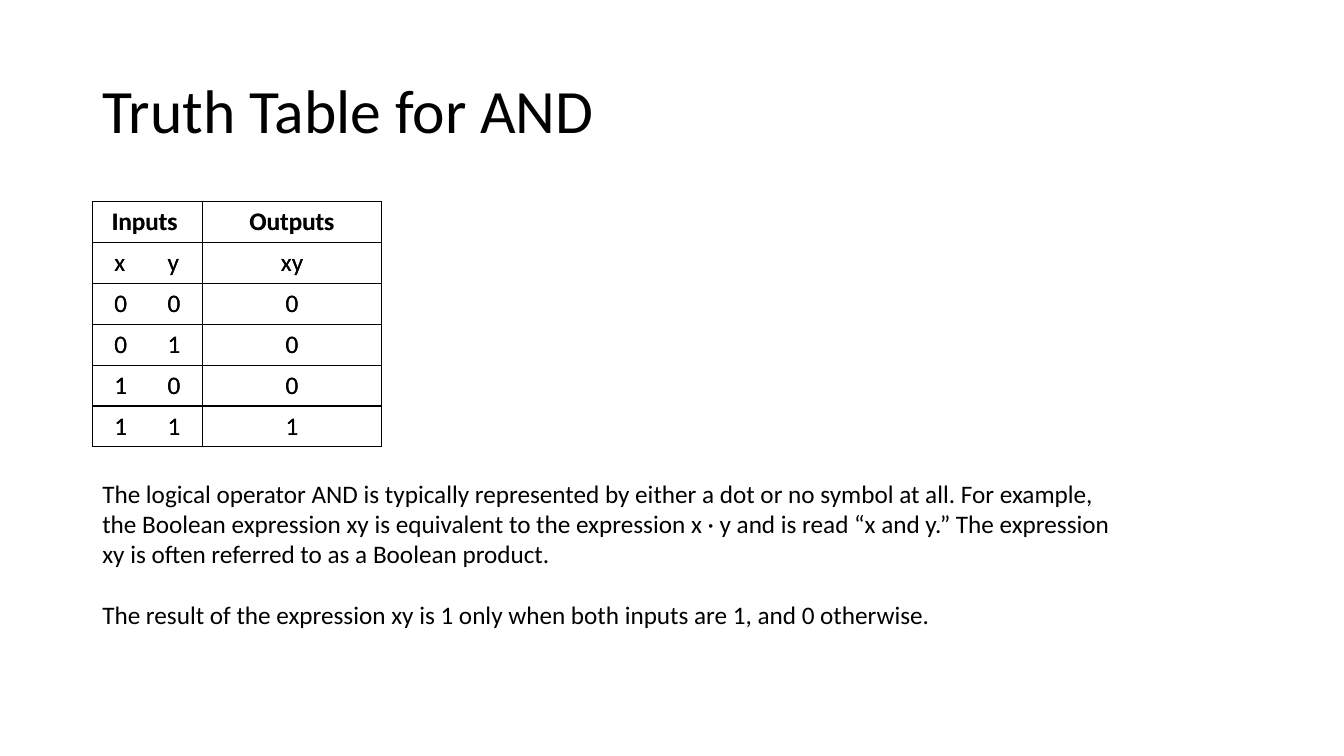
from lxml.etree import SubElement
from pptx import Presentation
from pptx.dml.color import RGBColor
from pptx.enum.text import MSO_ANCHOR, MSO_AUTO_SIZE, PP_ALIGN
from pptx.oxml.ns import qn
from pptx.util import Pt

COLORS = {"ink": "000000", "border": "000000"}
ROWS = [
    ("Inputs ", "Outputs"),
    ("x\ty", "xy"),
    ("0\t0", "0"),
    ("0\t1", "0"),
    ("1\t0", "0"),
    ("1\t1", "1"),
]
PARAGRAPHS = [
    "The logical operator AND is typically represented by either a dot or no symbol at all. "
    "For example, the Boolean expression xy is equivalent to the expression x · y and is read "
    "“x and y.” The expression xy is often referred to as a Boolean product.",
    "The result of the expression xy is 1 only when both inputs are 1, and 0 otherwise.",
]


class Deck:
    """Hold the text style and the current slide."""

    def __init__(self, prs, font="Calibri", size=18):
        """Add a title-only slide and keep the style."""
        self.s = prs.slides.add_slide(prs.slide_layouts[5])
        self.font, self.size = font, size

    def style(self, p, size=None, bold=False, align=PP_ALIGN.LEFT):
        """Format a paragraph and its runs."""
        p.alignment = align
        for r in p.runs:
            r.font.name = self.font
            r.font.size = Pt(size or self.size)
            r.font.bold = bold
            r.font.color.rgb = RGBColor.from_string(COLORS["ink"])

    def title(self, text, x, y, w, h):
        """Fill and move the title placeholder."""
        sp = self.s.shapes.title
        sp.left, sp.top, sp.width, sp.height = Pt(x), Pt(y), Pt(w), Pt(h)
        tf = sp.text_frame
        tf.text = text
        tf.auto_size = MSO_AUTO_SIZE.NONE
        tf.vertical_anchor = MSO_ANCHOR.MIDDLE
        p = tf.paragraphs[0]
        p.line_spacing = 0.9
        self.style(p, size=44)

    def text(self, paragraphs, x, y, w, h, gap):
        """Add a wrapped text box with spaced paragraphs."""
        tf = self.s.shapes.add_textbox(Pt(x), Pt(y), Pt(w), Pt(h)).text_frame
        tf.word_wrap = True
        tf.auto_size = MSO_AUTO_SIZE.SHAPE_TO_FIT_TEXT
        tf.text = "\n".join(paragraphs)
        for i, p in enumerate(tf.paragraphs):
            p.space_before = Pt(gap if i else 0)
            self.style(p)

    def border(self, cell, width=1):
        """Draw a solid line on every side of a cell."""
        tcPr = cell._tc.get_or_add_tcPr()
        for side in ("lnL", "lnR", "lnT", "lnB"):
            ln = SubElement(tcPr, qn(f"a:{side}"), w=str(Pt(width)))
            fill = SubElement(ln, qn("a:solidFill"))
            SubElement(fill, qn("a:srgbClr"), val=COLORS["border"])

    def tab_stop(self, p, pos):
        """Set a left tab stop on a paragraph."""
        tabs = SubElement(p._p.get_or_add_pPr(), qn("a:tabLst"))
        SubElement(tabs, qn("a:tab"), pos=str(Pt(pos)), algn="l")

    def table(self, rows, x, y, widths, row_h, indent, tab, bold_header):
        """Add a bordered, unfilled table."""
        frame = self.s.shapes.add_table(
            len(rows), len(widths), Pt(x), Pt(y), Pt(sum(widths)), Pt(row_h * len(rows)))
        tbl = frame.table
        tbl.first_row = tbl.horz_banding = False
        for col, width in zip(tbl.columns, widths):
            col.width = Pt(width)
        for i, row in enumerate(rows):
            tbl.rows[i].height = Pt(row_h)
            for j, text in enumerate(row):
                cell = tbl.cell(i, j)
                cell.text_frame.text = text
                p = cell.text_frame.paragraphs[0]
                paired = "\t" in text
                self.style(p, bold=bold_header and i == 0,
                           align=PP_ALIGN.LEFT if paired else PP_ALIGN.CENTER)
                if paired:
                    cell.margin_left = Pt(indent)
                    self.tab_stop(p, tab)
                self.border(cell)
                cell.fill.background()


def main():
    """Build and save the slide."""
    prs = Presentation()
    prs.slide_width, prs.slide_height = Pt(960), Pt(540)
    deck = Deck(prs)
    deck.title("Truth Table for AND", 66, 28.75, 828, 104.4)
    for bold_header in (False, True):
        deck.table(ROWS, 66, 144, (78.75, 127.75), 29.15,
                   indent=15.75, tab=38, bold_header=bold_header)
    deck.text(PARAGRAPHS, 66, 338, 740, 116.6, gap=22)
    prs.save("out.pptx")


if __name__ == "__main__":
    main()
